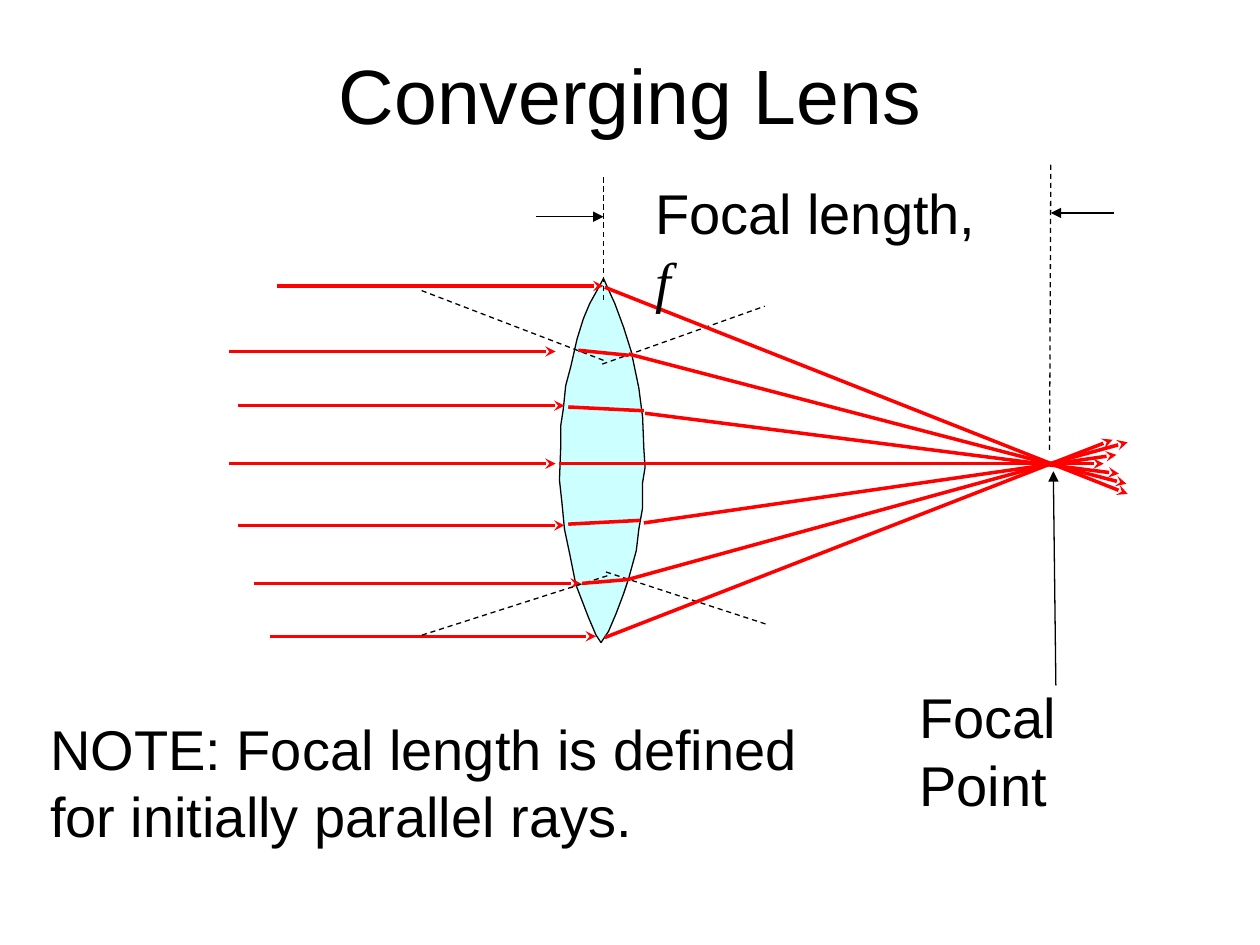
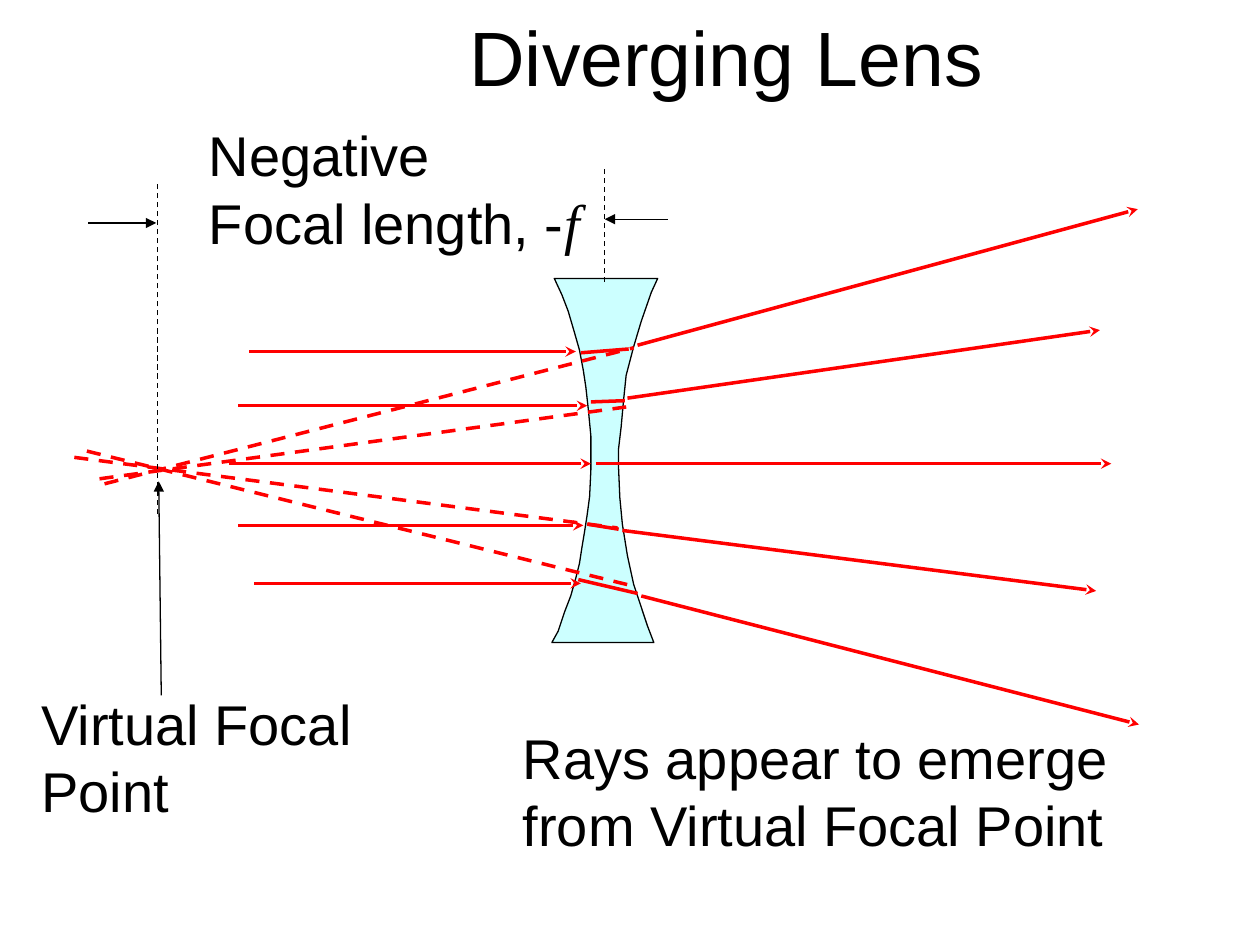
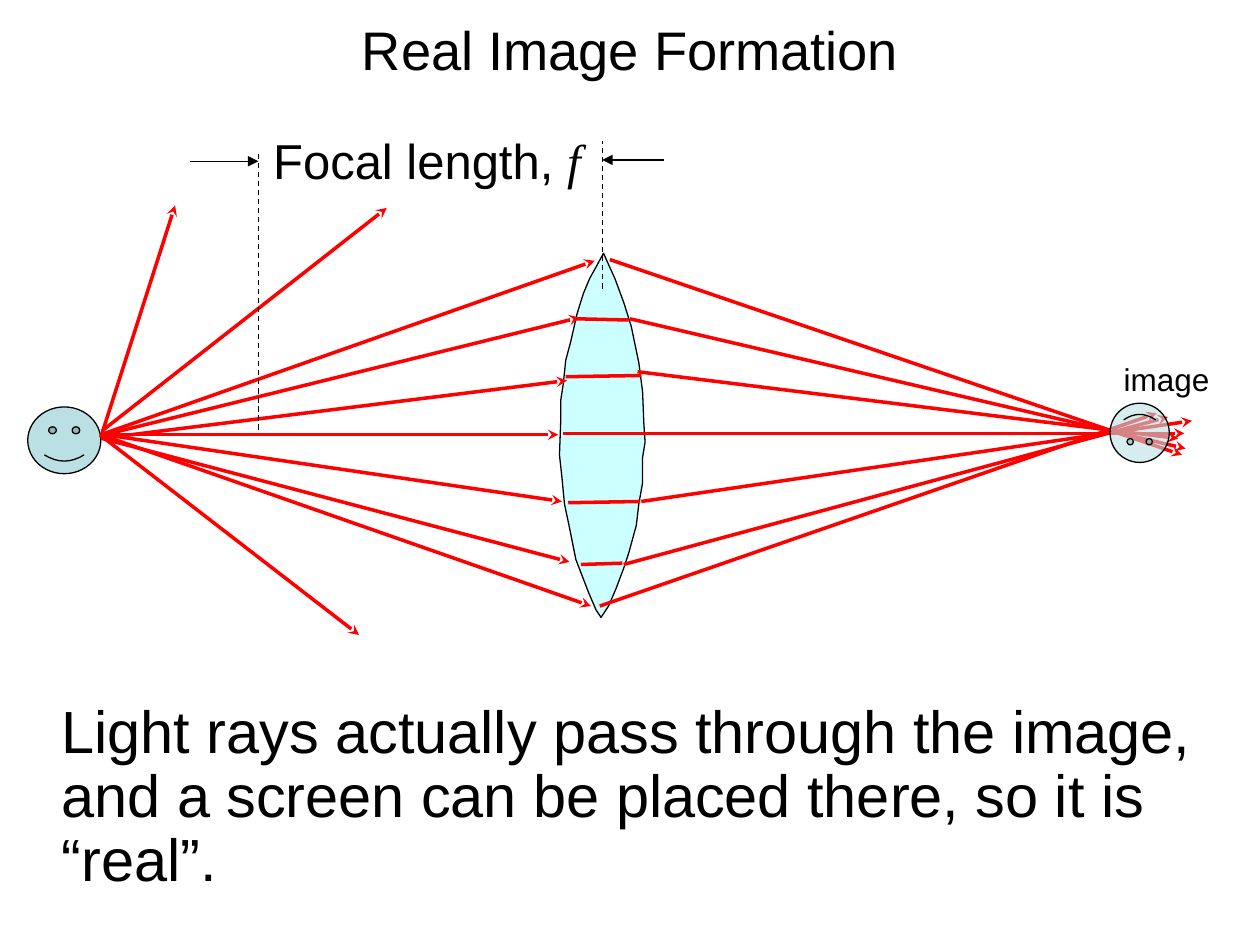
from lxml import etree
from pptx import Presentation
from pptx.dml.color import RGBColor
from pptx.enum.dml import MSO_LINE
from pptx.enum.shapes import MSO_CONNECTOR, MSO_SHAPE
from pptx.enum.text import MSO_ANCHOR, MSO_AUTO_SIZE, PP_ALIGN
from pptx.oxml.ns import qn
from pptx.util import Emu, Inches, Pt

STRAIGHT = MSO_CONNECTOR.STRAIGHT
FACE = MSO_SHAPE.SMILEY_FACE
DASH = MSO_LINE.DASH
MIDDLE = MSO_ANCHOR.MIDDLE
CENTER = PP_ALIGN.CENTER
FIXED = MSO_AUTO_SIZE.NONE

WIDE, HIGH = Inches(10), Inches(7.5)
COLS = 100
CELL = WIDE / COLS
COLORS = {"ink": "000000", "ray": "FF0000", "glass": "CCFFFF", "skin": "BBE0E3"}
SANS, SERIF = "Arial", "Times New Roman"
THIN, THICK = 0.75, 2
AXIS = 36.8

CONVEX = [
    (47.7, 51), (48.3, 50.1), (48.9, 48.7), (49.5, 47.1), (49.9, 45.9),
    (50.5, 43.7), (50.7, 42), (51, 40.3), (51, 38.3), (51.2, 37.1),
    (51.1, 35.6), (51, 33.1), (50.7, 30.8), (50.1, 27.9), (49.5, 26),
    (48.8, 24.1), (48.3, 23), (47.9, 22.1), (47.3, 23.2), (46.8, 24.1),
    (46.3, 25.3), (45.8, 26.9), (45.3, 29.1), (44.9, 30.6), (44.7, 32.5),
    (44.5, 33.8), (44.5, 35.5), (44.4, 38.1), (44.6, 39.9), (44.8, 42),
    (45.2, 43.9), (45.7, 46.4), (46.2, 47.7), (46.7, 49), (47.3, 50.4),
]
CONCAVE = [
    (43.8, 51), (51.9, 51), (51.4, 49.7), (50.8, 47.9), (50.3, 46.4),
    (49.8, 44.1), (49.4, 41.6), (49.2, 39.5), (49.1, 37.2), (49.1, 35.6),
    (49.3, 33.9), (49.5, 31.7), (49.7, 29.8), (50.3, 27.5), (50.9, 25.5),
    (51.7, 23.2), (52.2, 22.1), (44, 22.1), (44.6, 23.4), (45.1, 24.7),
    (45.6, 26.4), (46, 27.8), (46.3, 29.4), (46.5, 30.7), (46.7, 32.5),
    (46.9, 34.6), (46.9, 37.3), (46.8, 39.4), (46.6, 40.9), (46.4, 42.2),
    (46.2, 43.4), (46, 44.7), (45.7, 45.9), (45.3, 47.3), (44.8, 48.6),
    (44.3, 50.1),
]


def grid(*cells):
    return [Emu(round(cell * CELL)) for cell in cells]


def tint(name):
    return RGBColor.from_string(COLORS[name])


def style(font, size):
    font.name = SANS
    font.size = Pt(size)
    font.color.rgb = tint("ink")


def paint(shape, fill):
    shape.shadow.inherit = False
    shape.fill.solid()
    shape.fill.fore_color.rgb = tint(fill)
    shape.line.color.rgb = tint("ink")
    shape.line.width = Pt(THIN)


def start(deck, text, box, size=44):
    slide = deck.slides.add_slide(deck.slide_layouts[5])
    title = slide.shapes.title
    title.left, title.top, title.width, title.height = grid(*box)
    frame = title.text_frame
    frame.text = text
    frame.auto_size = FIXED
    frame.vertical_anchor = MIDDLE
    para = frame.paragraphs[0]
    para.alignment = CENTER
    style(para.font, size)
    return slide


def label(slide, box, text, size=32, sign="", wrap=True, space=None):
    frame = slide.shapes.add_textbox(*grid(*box)).text_frame
    frame.word_wrap = wrap
    para = frame.paragraphs[0]
    para.line_spacing = space
    style(para.font, size)
    para.add_run().text = text
    if sign:
        run = para.add_run()
        run.text = sign
        run.font.name = SERIF
        run.font.italic = True


def line(slide, ends, color, width, head=None, dash=False):
    link = slide.shapes.add_connector(STRAIGHT, *grid(*ends))
    link.line.color.rgb = tint(color)
    link.line.width = Pt(width)
    if dash:
        link.line.dash_style = DASH
    props = link.element.spPr
    if head:
        etree.SubElement(props.find(qn("a:ln")), qn("a:tailEnd"), type=head)
    etree.SubElement(props, qn("a:effectLst"))


def rays(slide, paths, head="stealth", dash=False):
    for ends in paths:
        line(slide, ends, "ray", THICK, head, dash)


def guides(slide, paths):
    for ends in paths:
        line(slide, ends, "ink", THIN, dash=True)


def arrows(slide, paths):
    for ends in paths:
        line(slide, ends, "ink", THIN, "triangle")


def beams(slide, paths):
    rays(slide, [(left, row, right, row) for left, right, row in paths])


def lens(slide, points, lift=0):
    spots = [grid(x, y - lift) for x, y in points]
    pen = slide.shapes.build_freeform(*spots[0])
    pen.add_line_segments(spots[1:], close=True)
    paint(pen.convert_to_shape(), "glass")


def face(slide, box, turn=0, alpha=None):
    shape = slide.shapes.add_shape(FACE, *grid(*box))
    paint(shape, "skin")
    shape.rotation = turn
    if alpha:
        color = shape.element.spPr.find(qn("a:solidFill"))[0]
        etree.SubElement(color, qn("a:alpha"), val=str(alpha * 1000))


def converge(deck):
    slide = start(deck, "Converging Lens", (5, 3, 90, 8.8))
    lens(slide, CONVEX)
    tips = [(22, 22.7), (18.2, 27.9), (18.9, 32.2), (18.2, AXIS),
            (18.9, 41.7), (20.2, 46.3), (21.4, 50.5)]
    beams(slide, [(x, x + 25.9, y) for x, y in tips])
    guides(slide, [
        (47.9, 28.6, 33.3, 23), (47.8, 28.9, 60.7, 24.3),
        (48.2, 45.7, 33.2, 50.5), (48.1, 45.4, 61, 49.6),
        (47.9, 23.8, 47.9, 13.8), (83.3, 35.7, 83.4, 13),
    ])
    rays(slide, [
        (45.9, 27.8, 49.9, 28.2), (45.1, 32.3, 51.1, 32.6),
        (45.1, 41.6, 50.8, 41.3), (46.2, 46.3, 49.8, 46),
    ], head=None)
    rays(slide, [
        (48, 22.8, 89.5, 39.2), (49.9, 28.1, 89.4, 38.4),
        (51.2, 32.8, 88.8, 37.6), (44.4, AXIS, 87.6, AXIS),
        (51.1, 41.5, 88.6, 36.1), (49.8, 46, 89.5, 35.1),
        (48, 50.6, 88.3, 34.9),
    ])
    arrows(slide, [(83.8, 54.4, 83.6, 37.4), (42.5, 17.2, 47.9, 17.2),
                   (88.4, 16.9, 83.4, 16.9)])
    label(slide, (72, 53.7, 23, 11.7), "Focal Point")
    label(slide, (51, 13.7, 28.5, 11.7), "Focal length, ", sign="f")
    label(slide, (3, 56.2, 64, 11.7),
          "NOTE: Focal length is defined for initially parallel rays.")


def diverge(deck):
    slide = start(deck, "Diverging Lens", (26.7, 0, 61.9, 8.8))
    lens(slide, CONCAVE)
    beams(slide, [
        (19.8, 45.7, 27.9), (18.9, 46.6, 32.2), (18.2, 46.9, AXIS),
        (18.9, 46.3, 41.7), (20.2, 46.1, 46.3), (47.3, 88.2, AXIS),
    ])
    rays(slide, [
        (46.1, 28, 49.9, 27.7), (46.9, 31.9, 49.6, 31.8),
        (46.6, 41.6, 49.1, 42), (45.9, 46, 50.6, 47.1),
    ], head=None)
    rays(slide, [
        (50.6, 27.4, 90.3, 16.6), (49.8, 31.6, 87.3, 26.2),
        (49.4, 42.1, 87, 46.9), (50.9, 47.3, 90.4, 57.5),
    ])
    rays(slide, [
        (8.3, 38.4, 50.3, 27.6), (7.9, 38, 49.7, 32.3),
        (5.9, 36.3, 49, 41.9), (6.9, 35.8, 50.2, 46.5),
    ], head=None, dash=True)
    guides(slide, [(12.5, 40.8, 12.5, 14.3), (48, 22.4, 48, 13.4)])
    arrows(slide, [(12.8, 55.2, 12.6, 38.2), (7, 17.7, 12.4, 17.7),
                   (53, 17.4, 48, 17.4)])
    label(slide, (2.3, 54.2, 28.2, 11.7), "Virtual Focal Point")
    label(slide, (15.6, 9.1, 31.4, 16.7), "Negative Focal length, -", sign="f")
    label(slide, (40.5, 56.9, 54.8, 11.7),
          "Rays appear to emerge from Virtual Focal Point")


def form(deck):
    slide = start(deck, "Real Image Formation", (5, 0, 90, 7.8), size=31)
    lens(slide, CONVEX, lift=2)
    face(slide, (2.2, 32.3, 5.8, 5.3))
    rays(slide, [
        (45.7, 25.3, 49.9, 25.4), (44.9, 29.9, 50.9, 29.8),
        (45.1, 39.9, 50.8, 39.8), (46.1, 44.8, 49.4, 44.7),
    ], head=None)
    rays(slide, [
        (8, 34.7, 13.9, 16.3), (8.1, 34.2, 30.7, 16.5),
        (8, 34.5, 47.2, 20.7), (8.3, 34.5, 46, 25.2),
        (8, 34.8, 45, 30.2), (8.3, 34.5, 44.3, 34.5),
        (8.3, 34.5, 44.6, 39.8), (8.1, 34.8, 45.2, 44.6),
        (8, 34.5, 46.9, 48.1), (8.3, 34.8, 28.5, 50.4),
    ])
    rays(slide, [
        (48.4, 20.6, 93.8, 36.1), (50, 25.3, 94.1, 35.6),
        (50.6, 29.5, 93.5, 34.8), (44.7, 34.4, 94, 34.4),
        (50.9, 39.8, 94.6, 33.4), (49.5, 44.8, 92.7, 33.1),
        (47.6, 48.1, 91.8, 32.8),
    ])
    guides(slide, [(20.5, 34.1, 20.5, 11.9), (47.8, 22.9, 47.8, 11.2)])
    arrows(slide, [(15.1, 12.8, 20.5, 12.8), (52.7, 12.7, 47.8, 12.7)])
    label(slide, (20.7, 9.9, 26.5, 5.7), "Focal length, ", 28, "f", wrap=False)
    label(slide, (3.9, 55.2, 92.7, 10.1),
          "Light rays actually pass through the image, and a screen "
          "can be placed there, so it is “real”.", 34, space=0.9)
    face(slide, (88.1, 32, 4.7, 4.7), turn=180, alpha=59)
    label(slide, (88.2, 28.1, 8.9, 4), "image", 18, wrap=False)


def main():
    deck = Presentation()
    deck.slide_width, deck.slide_height = WIDE, HIGH
    for build in (converge, diverge, form):
        build(deck)
    deck.save("out.pptx")


if __name__ == "__main__":
    main()
